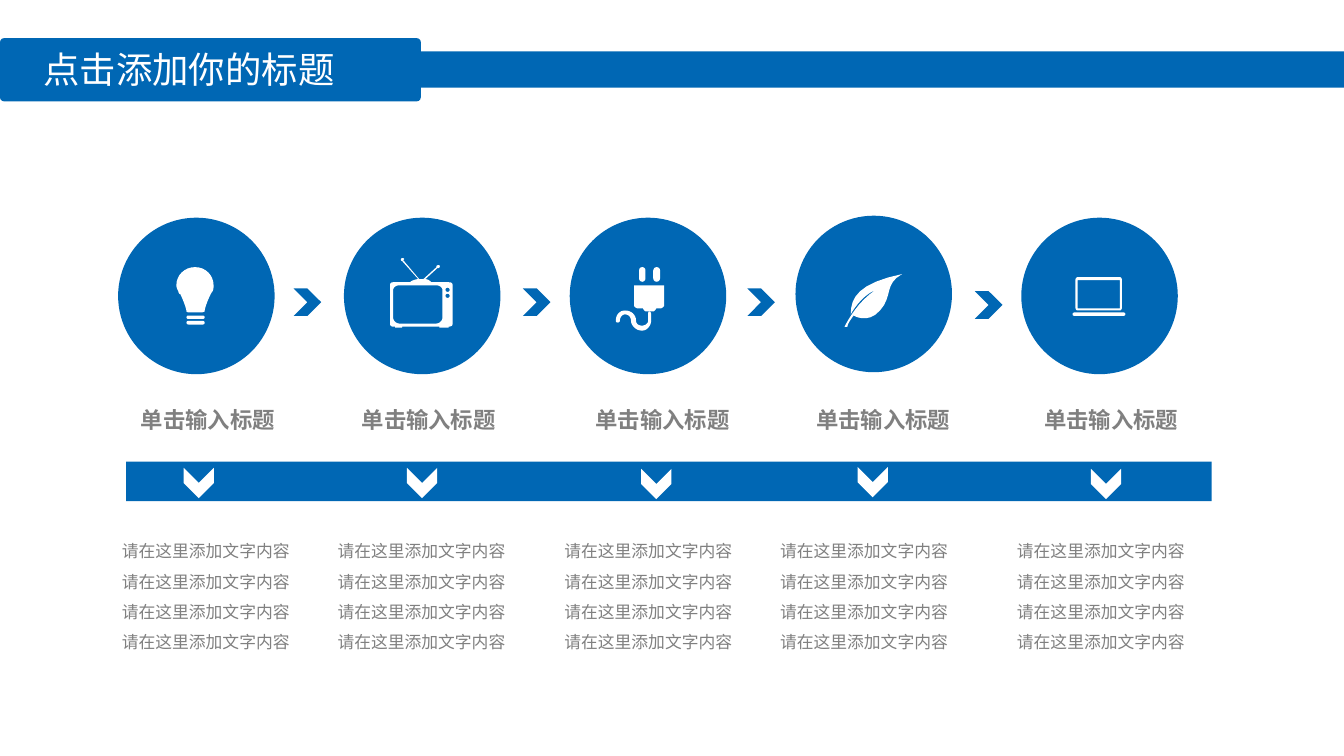
from lxml import etree
from pptx import Presentation
from pptx.dml.color import RGBColor
from pptx.enum.shapes import MSO_SHAPE as Preset
from pptx.enum.text import MSO_ANCHOR as Anchor
from pptx.oxml.ns import qn
from pptx.util import Pt

BLUE, WHITE, GREY = "0067B4", "FFFFFF", "808080"
HEADING_FONT, BODY_FONT = "Noto Sans CJK SC", "Calibri"

TITLE = "点击添加你的标题"
LABEL = "单击输入标题"
BODY = "请在这里添加文字内容" * 4

CIRCLE_LEFT, CIRCLE_STEP, CIRCLE_SIZE = 84.4, 161.28, 111.8
CIRCLE_TOPS = (155.5, 155.5, 155.5, 154.1, 155.5)
ARROWS = ((209.7, 206), (373.5, 206), (533.8, 206), (696.4, 208))
COLUMNS = (
    {"label": 93.6, "marker": (131.2, 334.2), "body": 79.9},
    {"label": 251.3, "marker": (290.7, 334.2), "body": 234},
    {"label": 418.3, "marker": (458, 334.9), "body": 396},
    {"label": 576, "marker": (612.6, 333.6), "body": 550.1},
    {"label": 738.7, "marker": (779.2, 334.9), "body": 719.3},
)

ICON_BARS = (
    (133.2, 225.4, 13, 2.4), (133.2, 229.2, 13, 2.6),
    (456.5, 190.8, 4.6, 10.5), (466.6, 190.8, 4.9, 10.5),
    (766.1, 223.2, 37.8, 2.4),
)
BULB = [[
    (152.6, 203.8), (152.6, 196.6, 146.9, 190.8, 139.4, 190.8),
    (131.8, 190.8, 126, 196.6, 126, 203.8), (126, 205.2, 126.7, 206.6, 127.4, 208.1),
    (127.4, 208.8, 128.2, 210.2, 128.9, 210.2), (131, 214.6, 133.2, 220.3, 133.2, 222.5),
    (133.2, 222.5, 133.9, 223.2, 135.4, 223.2), (144, 223.2),
    (144.7, 223.2, 146.2, 222.5, 146.2, 222.5), (146.2, 220.3, 148.3, 214.6, 150.5, 210.2),
    (150.5, 210.2, 151.2, 208.8, 151.9, 208.1), (152.6, 206.6, 152.6, 205.2, 152.6, 203.8),
]]
TELEVISION = [
    [
        (320.4, 201.6), (308.2, 201.6), (307.4, 200.9, 306, 199.4, 303.8, 199.4),
        (312.5, 191.5), (314.6, 191.9, 314.6, 189, 313.2, 189.4),
        (312, 189.4, 311.6, 190, 311.8, 190.8), (302.4, 199.4), (299.5, 199.4),
        (288, 185.8), (289.4, 185, 288.4, 184.3, 287.3, 184.3),
        (286.2, 184.3, 286, 186.5, 287.3, 186.5), (298.8, 199.4),
        (296.6, 199.4, 293, 200.9, 293, 201.6), (280.8, 201.6),
        (279.4, 201.6, 278.6, 202.3, 278.6, 203.8), (278.6, 231.1),
        (278.6, 232.6, 279.4, 233.3, 280.8, 233.3), (282.2, 233.3), (282.2, 234),
        (287.3, 234), (287.3, 233.3), (313.9, 233.3), (313.9, 234), (320.4, 234),
        (320.4, 233.3), (322.6, 233.3, 323.3, 232.6, 323.3, 231.1), (323.3, 203.8),
        (323.3, 202.3, 322.6, 201.6, 320.4, 201.6),
    ],
    [
        (316.1, 226.8), (316.1, 229, 313.9, 231.1, 311.8, 231.1), (285.1, 231.1),
        (283, 231.1, 280.8, 229, 280.8, 226.8), (280.8, 207.4),
        (280.8, 205.2, 283, 203.8, 285.1, 203.8), (311.8, 203.8),
        (313.9, 203.8, 316.1, 205.2, 316.1, 207.4),
    ],
] + [
    [(318.2, y), (318.2, y - 2, 321.2, y - 2, 321.2, y), (321.2, y + 2, 318.2, y + 2, 318.2, y)]
    for y in (211.3, 207)
]
PLUG = [[
    (452.9, 203.8), (474.5, 203.8), (474.5, 218.2),
    (474.5, 218.9, 473, 220.3, 471.6, 220.3), (468.7, 220.3),
    (468.7, 221, 467.3, 222.5, 466.6, 222.5), (461.5, 222.5),
    (460.8, 222.5, 459.4, 221, 459.4, 220.3), (455.8, 220.3),
    (454.3, 220.3, 452.9, 218.9, 452.9, 218.2),
]]
CORD = [[
    (463.7, 222.5), (463, 222.5, 463, 223.2, 463, 224.6), (463, 229),
    (463, 231.1, 460.8, 232.6, 458.6, 232.6), (455.8, 232.6, 454.3, 231.1, 454.3, 229),
    (454.3, 224.6, 450.7, 221.8, 446.4, 221.8), (442.8, 221.8, 439.9, 224.6, 439.9, 229),
    (439.9, 229.7, 439.9, 230.4, 441.4, 230.4), (442.1, 230.4, 442.8, 229.7, 442.8, 229),
    (442.8, 226.8, 444.2, 224.6, 446.4, 224.6), (449.3, 224.6, 450.7, 226.8, 450.7, 229),
    (450.7, 232.6, 454.3, 236.2, 458.6, 236.2), (462.2, 236.2, 465.1, 232.6, 465.1, 229),
    (465.1, 224.6), (465.1, 223.2, 464.4, 222.5, 463.7, 222.5),
]]
LEAF = [[
    (603.4, 233.3), (603.4, 233.3, 602.6, 234, 605.5, 233.3),
    (604.8, 231.8, 609.8, 225.4, 609.8, 225.4), (609.8, 225.4, 619.9, 231.8, 628.6, 221.8),
    (637.9, 211.7, 631.4, 203, 644.4, 195.8), (613.4, 202.3, 607.7, 212.4, 607.7, 224.6),
    (610.6, 218.9, 617.8, 210.2, 625, 207.4), (613.4, 215.3, 606.2, 227.5, 603.4, 233.3),
]]
LAPTOP = [
    [
        (799.9, 198), (769.7, 198), (769, 198, 768.2, 198.7, 768.2, 200.2), (768.2, 219.6),
        (768.2, 221, 769, 221.8, 769.7, 221.8), (799.9, 221.8),
        (800.6, 221.8, 801.4, 221, 801.4, 219.6), (801.4, 200.2),
        (801.4, 198.7, 800.6, 198, 799.9, 198),
    ],
    [(799.9, 220.3), (769.7, 220.3), (769.7, 200.2), (799.9, 200.2)],
]

presentation = Presentation()
presentation.slide_width, presentation.slide_height = Pt(960), Pt(540)
slide = presentation.slides.add_slide(presentation.slide_layouts[6])


def paint(shape, color):
    """Give a shape a flat fill with no line or shadow."""
    shape.shadow.inherit = False
    shape.fill.solid()
    shape.fill.fore_color.rgb = RGBColor.from_string(color)
    shape.line.fill.background()


def add_preset(preset, left, top, width, height, color, adjust=None, rotation=0):
    """Add a filled preset shape."""
    shape = slide.shapes.add_shape(preset, Pt(left), Pt(top), Pt(width), Pt(height))
    if adjust is not None:
        shape.adjustments[0] = adjust
    shape.rotation = rotation
    paint(shape, color)


def add_text(text, left, top, width, height, *, size, color, font=HEADING_FONT,
             bold=False, anchor=Anchor.MIDDLE, spacing=None):
    """Add a wrapping text box with one formatted paragraph."""
    frame = slide.shapes.add_textbox(Pt(left), Pt(top), Pt(width), Pt(height)).text_frame
    frame.word_wrap = True
    frame.vertical_anchor = anchor
    paragraph = frame.paragraphs[0]
    if spacing:
        paragraph.line_spacing = spacing
    run = paragraph.add_run()
    run.text = text
    run.font.size, run.font.bold, run.font.name = Pt(size), bold, font
    run.font.color.rgb = RGBColor.from_string(color)
    etree.SubElement(run.font._element, qn("a:ea")).set("typeface", font)


def flatten(contour, steps=8):
    """Turn line ends and cubic curves into a list of points."""
    points = [contour[0]]
    for part in contour[1:]:
        if len(part) == 2:
            points.append(part)
            continue
        x0, y0 = points[-1]
        x1, y1, x2, y2, x3, y3 = part
        for step in range(1, steps + 1):
            t = step / steps
            a, b, c, d = (1 - t) ** 3, 3 * t * (1 - t) ** 2, 3 * t * t * (1 - t), t ** 3
            points.append((a * x0 + b * x1 + c * x2 + d * x3, a * y0 + b * y1 + c * y2 + d * y3))
    return [(Pt(x), Pt(y)) for x, y in points]


def add_icon(contours):
    """Add a white outline whose inner contours are holes."""
    outlines = [flatten(contour) for contour in contours]
    builder = slide.shapes.build_freeform(*outlines[0][0], scale=1.0)
    for index, points in enumerate(outlines):
        if index:
            builder.move_to(*points[0])
        builder.add_line_segments(points[1:], close=True)
    paint(builder.convert_to_shape(), WHITE)


add_preset(Preset.RECTANGLE, 13.7, 36.7, 946.3, 25.9, BLUE)
add_preset(Preset.ROUNDED_RECTANGLE, 0, 27.2, 300.6, 45.2, BLUE, adjust=0.067)
add_text(TITLE, 23.8, 29.5, 265, 38.9, size=26, color=WHITE)

for index, top in enumerate(CIRCLE_TOPS):
    add_preset(Preset.OVAL, CIRCLE_LEFT + index * CIRCLE_STEP, top, CIRCLE_SIZE, CIRCLE_SIZE, BLUE)
for icon in (BULB, TELEVISION, PLUG, CORD, LEAF, LAPTOP):
    add_icon(icon)
for bar in ICON_BARS:
    add_preset(Preset.ROUNDED_RECTANGLE, *bar, WHITE, adjust=0.5)
for left, top in ARROWS:
    add_preset(Preset.CHEVRON, left, top, 19.7, 19.7, BLUE, adjust=0.5)

add_preset(Preset.RECTANGLE, 90.2, 329.8, 775.4, 28.1, BLUE)
for column in COLUMNS:
    add_text(LABEL, column["label"], 286.6, 162.7, 26.6, size=16, color=GREY, bold=True)
    add_preset(Preset.CHEVRON, *column["marker"], 21.6, 21.6, WHITE, adjust=0.5, rotation=90)
    add_text(BODY, column["body"], 375.8, 146, 62.6, size=12, color=GREY, font=BODY_FONT,
             anchor=Anchor.TOP, spacing=1.5)

presentation.save("out.pptx")
